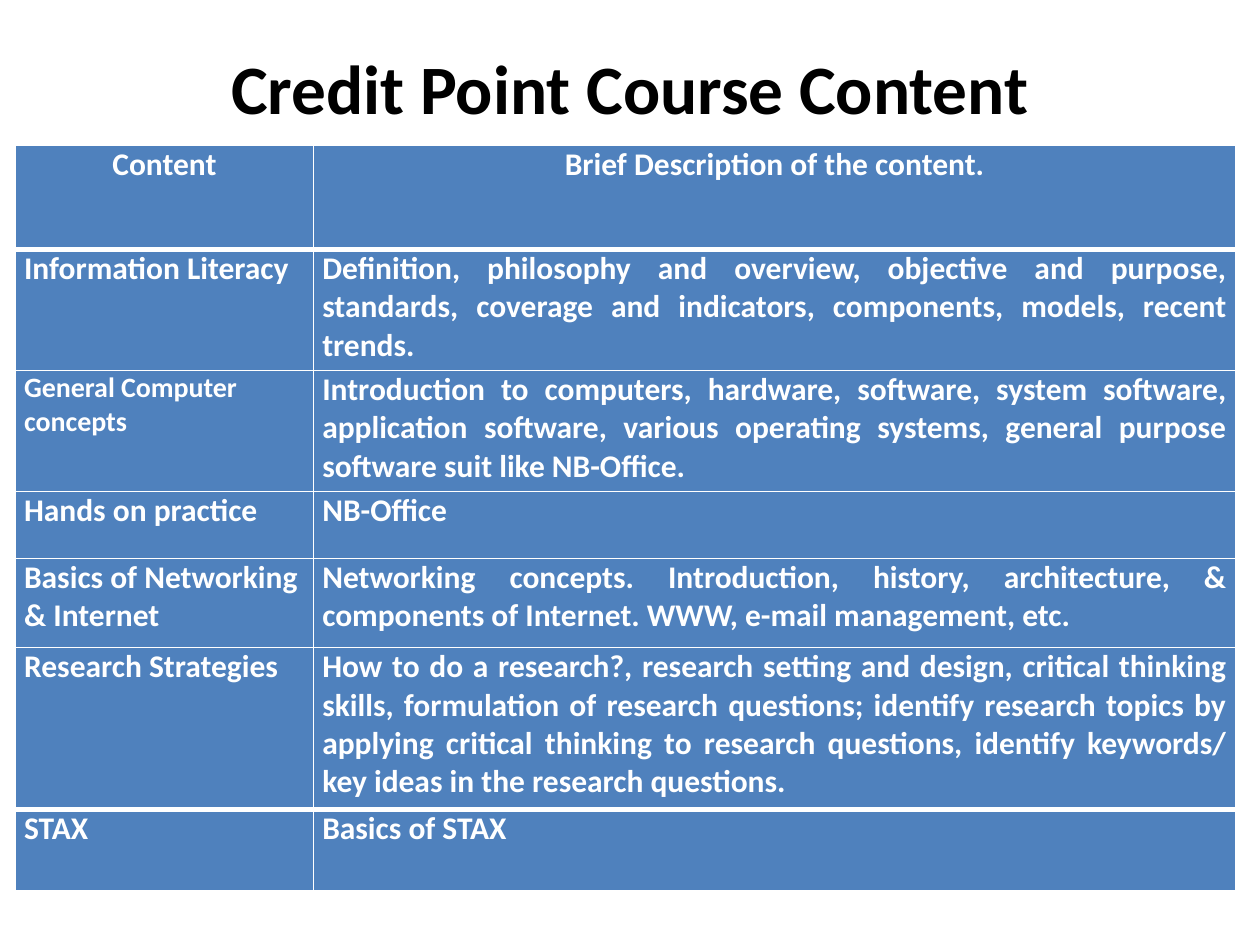
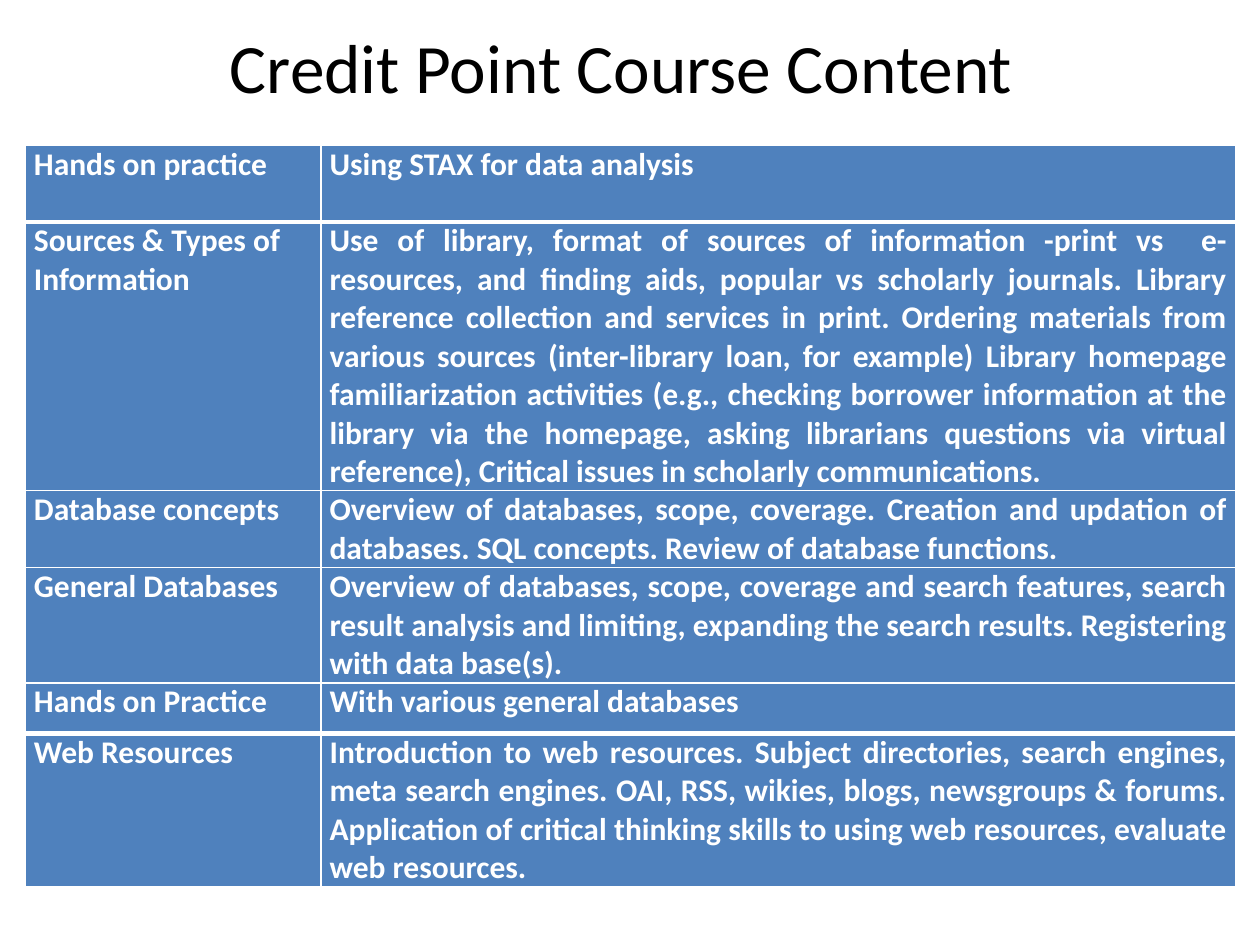
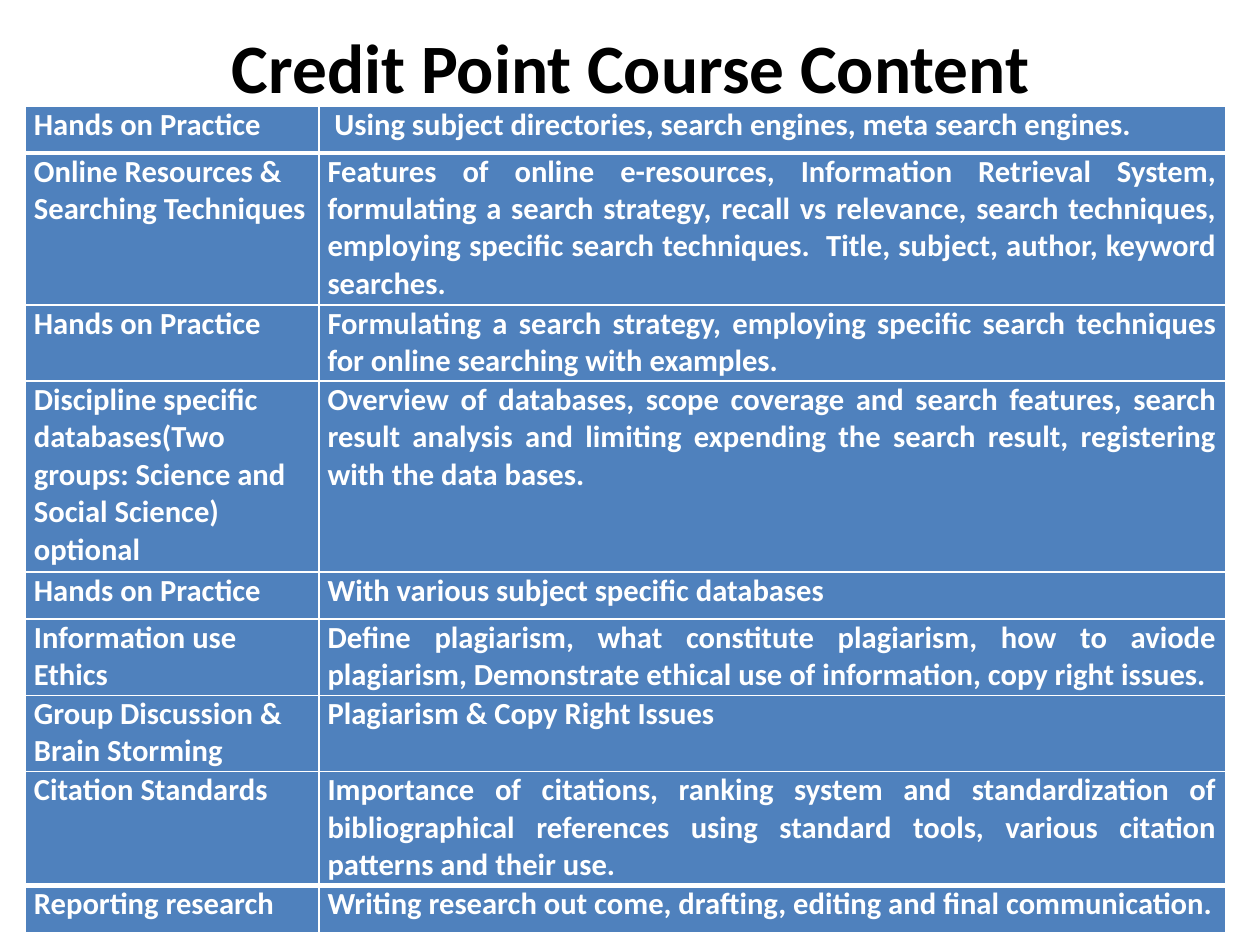
"""Builds three slides of tables that set out the content of a credit point course."""
from lxml.etree import SubElement
from pptx import Presentation
from pptx.dml.color import RGBColor
from pptx.enum.text import MSO_ANCHOR, PP_ALIGN
from pptx.oxml.ns import qn
from pptx.util import Pt

COLORS = {"title": "000000", "cell": "4F81BD", "text": "FFFFFF", "rule": "FFFFFF"}
FONT = "Calibri"
TITLE = "Credit Point Course Content"
TITLE_SIZE = 39.6
TITLE_WIDTH, TITLE_HEIGHT = 648, 56
CELL_INSET = 5
THIN, THICK = 1, 3
SMALL_CELLS = {"General Computer concepts": 16}

PAGES = [
    {
        "title_at": (36, 21.5), "title_bold": True, "has_heading": True,
        "table_at": (8.8, 83), "columns": (170.4, 527), "size": 18,
        "rows": [
            (59.5, "Content", "Brief Description of the content."),
            (69.2, "Information Literacy", "Definition, philosophy and overview, objective and purpose, standards, coverage and indicators, components, models, recent trends."),
            (69.2, "General Computer concepts", "Introduction to computers, hardware, software, system software, application software, various operating systems, general purpose software suit like NB-Office."),
            (38.2, "Hands on practice", "NB-Office"),
            (51, "Basics of Networking & Internet", "Networking concepts. Introduction, history, architecture, & components of Internet. WWW, e-mail management, etc."),
            (92.5, "Research Strategies", "How to do a research?, research setting and design, critical thinking skills, formulation of research questions; identify research topics by applying critical thinking to research questions, identify keywords/ key ideas in the research questions."),
            (46.4, "STAX", "Basics of STAX"),
        ],
    },
    {
        "title_at": (31, 9.5), "title_bold": False, "has_heading": False,
        "table_at": (14.4, 83), "columns": (169, 523), "size": 18,
        "rows": [
            (43.8, "Hands on practice", "Using STAX for data analysis"),
            (153.6, "Sources & Types of Information", "Use of library, format of sources of information -print vs  e-resources, and finding aids, popular vs scholarly journals. Library reference collection and services in print. Ordering materials from various sources (inter-library loan, for example) Library homepage familiarization activities (e.g., checking borrower information at the library via the homepage, asking librarians questions via virtual reference), Critical issues in scholarly communications."),
            (44, "Database concepts", "Overview of databases, scope, coverage. Creation and updation of databases. SQL concepts. Review of database functions."),
            (65.8, "General Databases", "Overview of databases, scope, coverage and search features, search result analysis and limiting, expanding the search results. Registering with data base(s)."),
            (29, "Hands on Practice", "With various general databases"),
            (87.5, "Web Resources", "Introduction to web resources. Subject directories, search engines, meta search engines. OAI, RSS, wikies, blogs, newsgroups & forums. Application of critical thinking skills to using web resources, evaluate web resources."),
        ],
    },
    {
        "title_at": (36.5, 9.5), "title_bold": True, "has_heading": False,
        "table_at": (14.4, 60.5), "columns": (167.8, 518.4), "size": 17.5,
        "rows": [
            (26.9, "Hands on Practice", " Using subject directories, search engines, meta search engines."),
            (86.9, "Online Resources & Searching Techniques", "Features of online e-resources, Information Retrieval System, formulating a search strategy, recall vs relevance, search techniques, employing specific search techniques.  Title, subject, author, keyword searches."),
            (43.6, "Hands on Practice", "Formulating a search strategy, employing specific search techniques for online searching with examples."),
            (109, "Discipline specific databases(Two groups: Science and Social Science) optional", "Overview of databases, scope coverage and search features, search result analysis and limiting expending the search result, registering with the data bases."),
            (26.9, "Hands on Practice", "With various subject specific databases"),
            (43.6, "Information use Ethics", "Define plagiarism, what constitute plagiarism, how to aviode plagiarism, Demonstrate ethical use of information, copy right issues."),
            (43.6, "Group Discussion & Brain Storming", "Plagiarism & Copy Right Issues"),
            (65.2, "Citation Standards", "Importance of citations, ranking system and standardization of bibliographical references using standard tools, various citation patterns and their use."),
            (26.9, "Reporting research", "Writing research out come, drafting, editing and final communication."),
        ],
    },
]


def style_text(frame, size, color, bold, alignment):
    for para in frame.paragraphs:
        para.alignment = alignment
        for span in para.runs:
            span.font.name = FONT
            span.font.size = Pt(size)
            span.font.bold = bold
            span.font.color.rgb = RGBColor.from_string(COLORS[color])


def add_title(page, left, top, bold):
    box = page.shapes.add_textbox(Pt(left), Pt(top), Pt(TITLE_WIDTH), Pt(TITLE_HEIGHT))
    frame = box.text_frame
    frame.word_wrap = True
    frame.vertical_anchor = MSO_ANCHOR.MIDDLE
    frame.text = TITLE
    style_text(frame, TITLE_SIZE, "title", bold, PP_ALIGN.CENTER)


def set_borders(cell, top, bottom):
    properties = cell._tc.get_or_add_tcPr()
    for side, width in (("L", THIN), ("R", THIN), ("T", top), ("B", bottom)):
        line = SubElement(properties, qn(f"a:ln{side}"), w=str(Pt(width)))
        fill = SubElement(line, qn("a:solidFill"))
        SubElement(fill, qn("a:srgbClr"), val=COLORS["rule"])


def style_cell(cell, text, size, alignment, top, bottom):
    cell.margin_left = cell.margin_right = Pt(CELL_INSET)
    cell.margin_top = cell.margin_bottom = 0
    set_borders(cell, top, bottom)
    cell.fill.solid()
    cell.fill.fore_color.rgb = RGBColor.from_string(COLORS["cell"])
    cell.text_frame.text = text
    style_text(cell.text_frame, SMALL_CELLS.get(text, size), "text", True, alignment)


def add_course_table(page, content):
    rows, columns = content["rows"], content["columns"]
    left, top = content["table_at"]
    height = sum(row[0] for row in rows)
    table = page.shapes.add_table(len(rows), len(columns), Pt(left), Pt(top),
                                  Pt(sum(columns)), Pt(height)).table
    table.first_row = table.horz_banding = False
    for column, width in zip(table.columns, columns):
        column.width = Pt(width)
    thick_rules = (1, len(rows) - 1)
    for index, (row_height, *texts) in enumerate(rows):
        table.rows[index].height = Pt(row_height)
        above, below = (THICK if rule in thick_rules else THIN for rule in (index, index + 1))
        is_heading = content["has_heading"] and index == 0
        alignments = [PP_ALIGN.CENTER] * 2 if is_heading else [PP_ALIGN.LEFT, PP_ALIGN.JUSTIFY]
        for number, (text, alignment) in enumerate(zip(texts, alignments)):
            style_cell(table.cell(index, number), text, content["size"], alignment, above, below)


def main():
    deck = Presentation()
    deck.slide_width, deck.slide_height = Pt(720), Pt(540)
    for content in PAGES:
        page = deck.slides.add_slide(deck.slide_layouts[6])
        add_title(page, *content["title_at"], content["title_bold"])
        add_course_table(page, content)
    deck.save("out.pptx")


if __name__ == "__main__":
    main()
